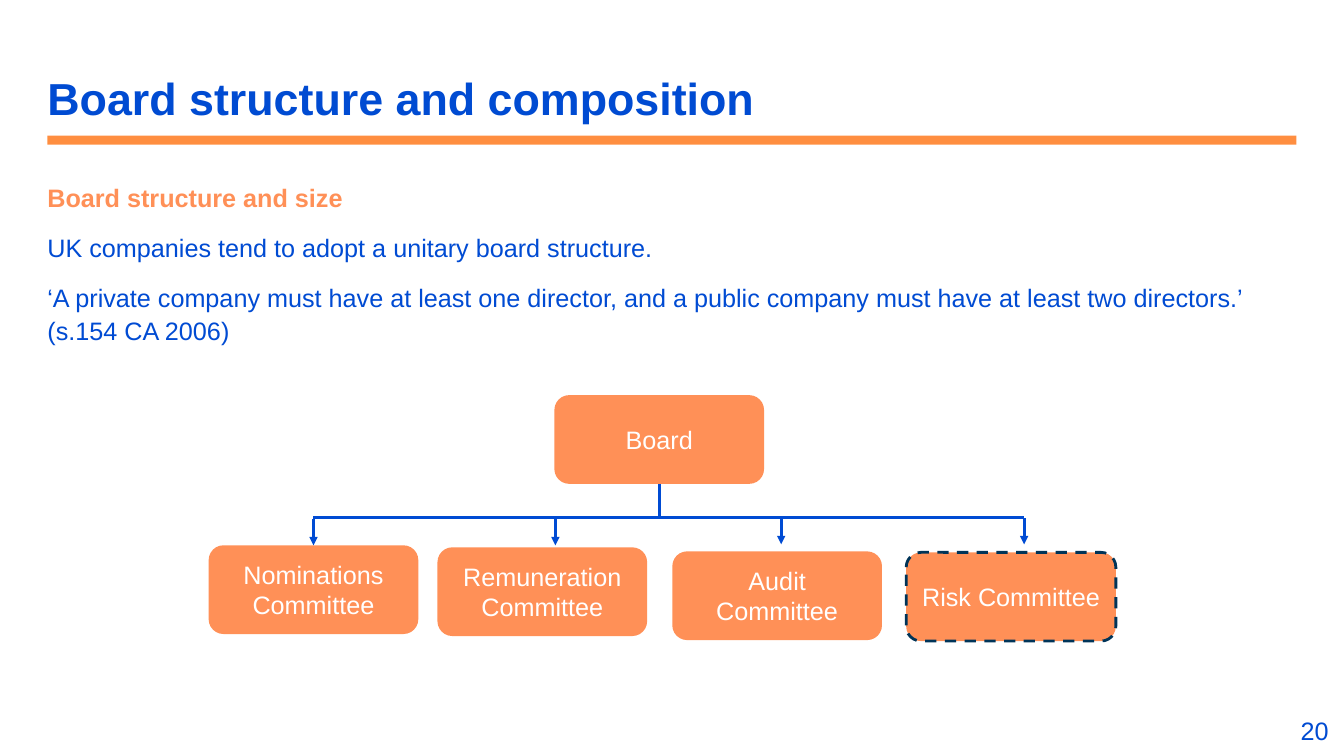
from lxml import etree
from pptx import Presentation
from pptx.dml.color import RGBColor
from pptx.enum.dml import MSO_LINE
from pptx.enum.shapes import MSO_CONNECTOR, MSO_SHAPE
from pptx.enum.text import MSO_ANCHOR, PP_ALIGN
from pptx.oxml.ns import qn
from pptx.util import Pt

STRAIGHT = MSO_CONNECTOR.STRAIGHT
ROUND = MSO_SHAPE.ROUNDED_RECTANGLE
DASH = MSO_LINE.DASH
MIDDLE, BOTTOM = MSO_ANCHOR.MIDDLE, MSO_ANCHOR.BOTTOM
CENTER, RIGHT = PP_ALIGN.CENTER, PP_ALIGN.RIGHT
TOP_SIDE, BOTTOM_SIDE = 0, 2

BLUE, TEXT_BLUE = "004BD2", "004BD3"
ORANGE, RULE, NAVY, WHITE = "FF9057", "FF6900", "003458", "FFFFFF"
BOX_W, BOX_H = 149.76, 63.36

# Committee name, box left and top, arrow x and top, all within the chart
UNITS = [
    ("Nominations Committee", 0, 107.28, 74.88, 88.56),
    ("Remuneration Committee", 163.44, 108.72, 247.68, 88.56),
    ("Audit Committee", 331.2, 111.6, 408.96, 87.84),
    ("Risk Committee", 498.24, 112.32, 582.48, 87.84),
]
ARROW = 18.72


def color(code):
    return RGBColor.from_string(code)


def style(para, size, code, bold=False):
    font = para.font
    font.name, font.size, font.bold = "Arial", Pt(size), bold
    font.color.rgb = color(code)


def text(slide, x, y, w, h, inset=0):
    box = slide.shapes.add_textbox(Pt(x), Pt(y), Pt(w), Pt(h))
    frame = box.text_frame
    frame.word_wrap = True
    frame.margin_left = frame.margin_right = Pt(inset)
    frame.margin_top = frame.margin_bottom = Pt(inset / 2)
    return frame


def line(slide, x1, y1, x2, y2, code=TEXT_BLUE, width=2):
    link = slide.shapes.add_connector(STRAIGHT, Pt(x1), Pt(y1), Pt(x2), Pt(y2))
    link.line.color.rgb = color(code)
    link.line.width = Pt(width)
    etree.SubElement(link._element.spPr, qn("a:effectLst"))
    return link


def header(slide, x, y, w, h):
    frame = text(slide, x, y, w, h)
    frame.vertical_anchor = BOTTOM
    para = frame.paragraphs[0]
    para.text = "Board structure and composition"
    para.line_spacing = 0.9
    style(para, 32, BLUE, True)
    # Translucent rule under the title
    rule = line(slide, x, y + h + 10.8, x + w, y + h + 10.8, RULE, 6.5)
    tint = rule.line._ln.find(".//" + qn("a:srgbClr"))
    etree.SubElement(tint, qn("a:alpha"), val="75000")


def body(slide, x, y, w, h):
    frame = text(slide, x, y, w, h)
    rows = [
        ("Board structure and size", ORANGE, True),
        ("UK companies tend to adopt a unitary board structure.", TEXT_BLUE, False),
        ("‘A private company must have at least one director, and a public company "
         "must have at least two directors.’ (s.154 CA 2006)", TEXT_BLUE, False),
    ]
    for i, (words, code, bold) in enumerate(rows):
        para = frame.add_paragraph() if i else frame.paragraphs[0]
        para.text = words
        para.line_spacing, para.space_before = 1.1, Pt(12)
        style(para, 18, code, bold)


def unit(slide, x, y, name):
    box = slide.shapes.add_shape(ROUND, Pt(x), Pt(y), Pt(BOX_W), Pt(BOX_H))
    box.shadow.inherit = False
    box.fill.solid()
    box.fill.fore_color.rgb = color(ORANGE)
    box.line.fill.background()
    frame = box.text_frame
    frame.word_wrap = True
    frame.vertical_anchor = MIDDLE
    para = frame.paragraphs[0]
    para.text = name
    para.alignment = CENTER
    style(para, 18, WHITE)
    return box


def chart(slide, x, y):
    # Boxes
    boxes = [unit(slide, x + left, y + top, name) for name, left, top, _, _ in UNITS]
    edge = boxes[-1].line
    edge.color.rgb = color(NAVY)
    edge.width, edge.dash_style = Pt(2), DASH
    board = unit(slide, x + 246.96, y, "Board")
    # Crossbar, arrows and stem
    bar = y + 87.12
    line(slide, x + UNITS[0][3], bar, x + UNITS[-1][3], bar)
    arrows = []
    for _, _, _, mid, top in UNITS:
        arrow = line(slide, x + mid, y + top, x + mid, y + top + ARROW)
        etree.SubElement(arrow.line._ln, qn("a:tailEnd"), type="triangle")
        arrows.append(arrow)
    arrows[0].end_connect(boxes[0], TOP_SIDE)
    mid = x + 246.96 + BOX_W / 2
    stem = line(slide, mid, y + BOX_H, mid, bar)
    stem.begin_connect(board, BOTTOM_SIDE)


def number(slide, x, y, w, h):
    para = text(slide, x, y, w, h, 7.2).paragraphs[0]
    para.text = "20"
    para.alignment = RIGHT
    style(para, 18, BLUE)


def main():
    deck = Presentation()
    deck.slide_width, deck.slide_height = Pt(960), Pt(540)
    slide = deck.slides.add_slide(deck.slide_layouts[6])
    header(slide, 33.84, 25.92, 892.08, 63.36)
    body(slide, 33.84, 128.16, 892.08, 374.4)
    chart(slide, 149.04, 282.24)
    number(slide, 908.64, 507.6, 47.52, 28.8)
    deck.save("out.pptx")


if __name__ == "__main__":
    main()
